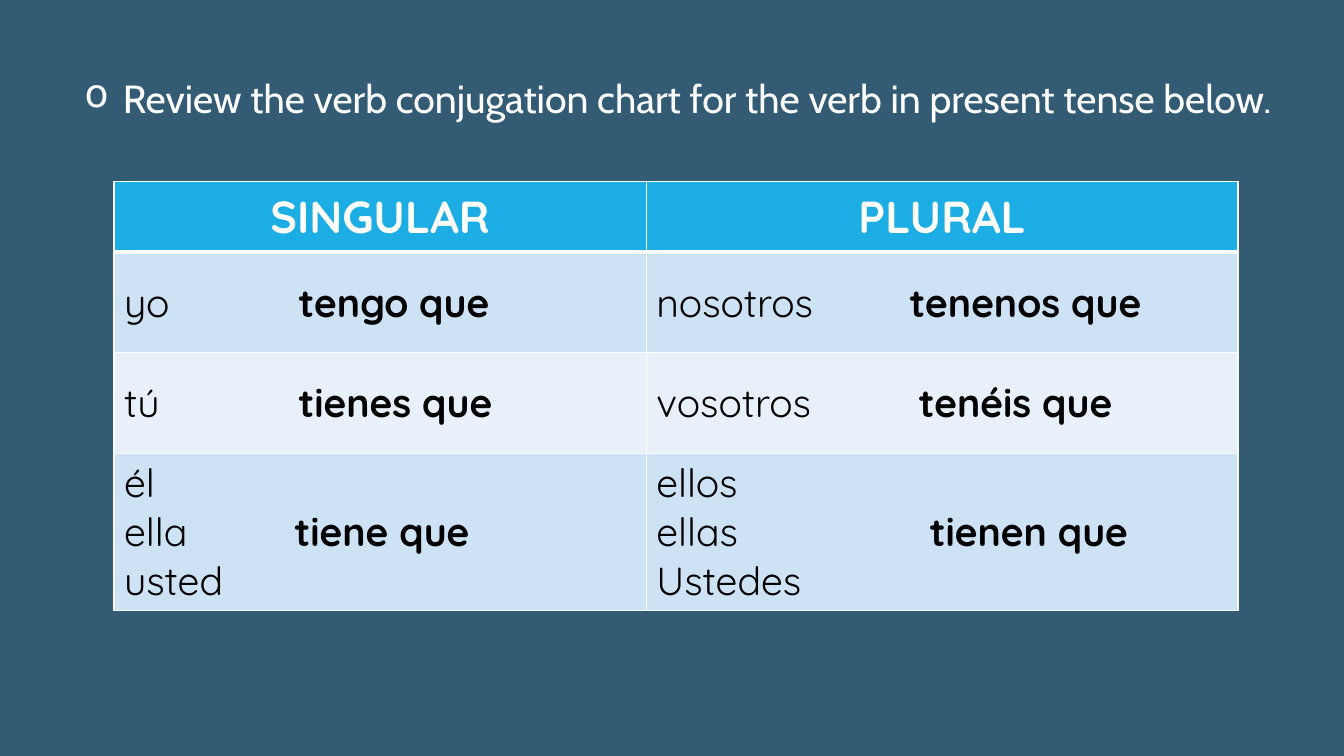
from lxml.etree import SubElement
from pptx import Presentation
from pptx.dml.color import RGBColor
from pptx.enum.text import MSO_ANCHOR, MSO_AUTO_SIZE, PP_ALIGN
from pptx.oxml import parse_xml
from pptx.oxml.ns import nsdecls, qn
from pptx.util import Inches, Pt

BACKGROUND = RGBColor(0x33, 0x5B, 0x74)
WHITE = RGBColor(0xFF, 0xFF, 0xFF)
BLACK = RGBColor(0x00, 0x00, 0x00)
HEADER_BLUE = RGBColor(0x1C, 0xAD, 0xE4)
DARK_BAND = RGBColor(0xCD, 0xE3, 0xF5)
LIGHT_BAND = RGBColor(0xE8, 0xF1, 0xFA)


def add_span(para, text, font, size, color, bold=False):
    span = para.add_run()
    span.text = text
    span.font.name = font
    span.font.size = Pt(size)
    span.font.color.rgb = color
    span.font.bold = bold


def add_borders(cell, top, bottom):
    properties = cell._tc.get_or_add_tcPr()
    widths = {"lnL": 1, "lnR": 1, "lnT": top, "lnB": bottom}
    for position, (side, width) in enumerate(widths.items()):
        properties.insert(position, parse_xml(
            f'<a:{side} {nsdecls("a")} w="{Pt(width)}"><a:solidFill>'
            f'<a:srgbClr val="{WHITE}"/></a:solidFill></a:{side}>'))


deck = Presentation()
deck.slide_width = Inches(13.33)
deck.slide_height = Inches(7.5)
page = deck.slides.add_slide(deck.slide_layouts[6])
page.background.fill.solid()
page.background.fill.fore_color.rgb = BACKGROUND

headings = ["SINGULAR", "PLURAL"]
conjugations = [
    [(["yo"], "tengo que", 1.73), (["nosotros"], "tenenos que", 2.51)],
    [(["tú"], "tienes que", 1.73), (["vosotros"], "tenéis que", 2.6)],
    [(["él", "ella", "usted"], "tiene que", 1.69),
     (["ellos", "ellas", "Ustedes"], "tienen que", 2.71)],
]

table = page.shapes.add_table(
    4, 2, Inches(1.13), Inches(1.8), Inches(11.15), Inches(4.2)).table
for column, width in zip(table.columns, [5.28, 5.87]):
    column.width = Inches(width)
for row, height in zip(table.rows, [0.7, 1, 1, 1.43]):
    row.height = Inches(height)

for index, heading in enumerate(headings):
    cell = table.cell(0, index)
    cell.vertical_anchor = MSO_ANCHOR.MIDDLE
    cell.fill.solid()
    cell.fill.fore_color.rgb = HEADER_BLUE
    add_borders(cell, 1, 3)
    para = cell.text_frame.paragraphs[0]
    para.alignment = PP_ALIGN.CENTER
    add_span(para, heading, "Quicksand", 32, WHITE, True)

for row_index, forms in enumerate(conjugations, start=1):
    for column_index, (pronouns, verb, verb_left) in enumerate(forms):
        cell = table.cell(row_index, column_index)
        cell.vertical_anchor = MSO_ANCHOR.MIDDLE
        cell.fill.solid()
        cell.fill.fore_color.rgb = DARK_BAND if row_index % 2 else LIGHT_BAND
        add_borders(cell, 3 if row_index == 1 else 1, 1)
        frame = cell.text_frame
        for line, pronoun in enumerate(pronouns):
            para = frame.add_paragraph() if line else frame.paragraphs[0]
            if line == len(pronouns) // 2:
                tabs = SubElement(para._p.get_or_add_pPr(), qn("a:tabLst"))
                SubElement(tabs, qn("a:tab"), pos=str(Inches(verb_left)), algn="l")
                add_span(para, pronoun + "\t", "Quicksand", 28, BLACK)
                add_span(para, verb, "Quicksand", 28, BLACK, True)
            else:
                add_span(para, pronoun, "Quicksand", 28, BLACK)

box = page.shapes.add_textbox(Inches(0.74), Inches(0.66), Inches(12.42), Inches(0.59))
box.text_frame.word_wrap = True
box.text_frame.auto_size = MSO_AUTO_SIZE.SHAPE_TO_FIT_TEXT
para = box.text_frame.paragraphs[0]
para.line_spacing = 1.07
para.space_after = Pt(8)
bullet = para._p.get_or_add_pPr()
bullet.set("marL", str(Inches(0.38)))
bullet.set("indent", str(Inches(-0.38)))
SubElement(bullet, qn("a:buChar"), char="o")
add_span(para, "Review the verb conjugation chart for the verb in present tense below.",
         "Cabin", 28, WHITE)

deck.save("out.pptx")
